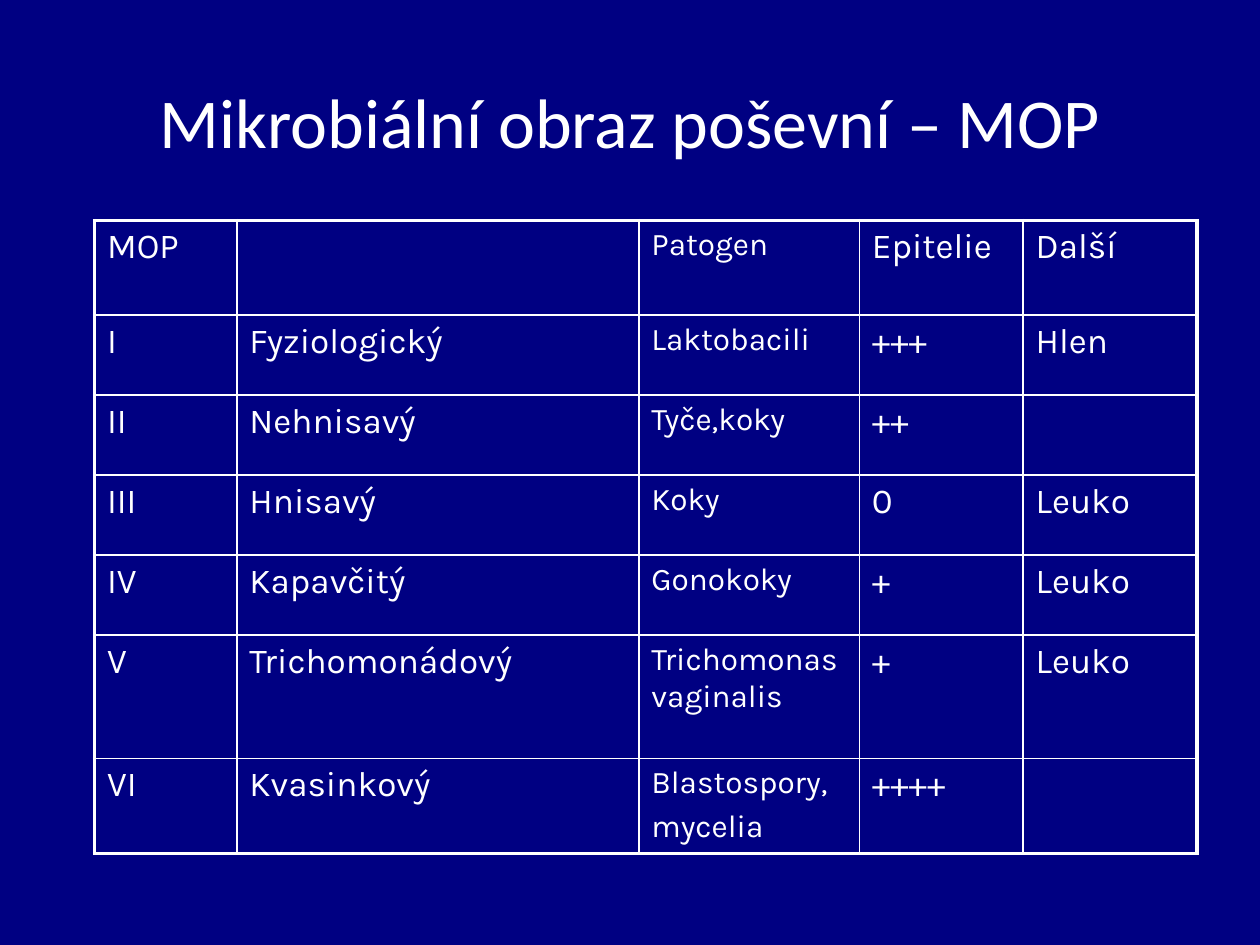
from lxml import etree
from pptx import Presentation
from pptx.dml.color import RGBColor
from pptx.enum.text import MSO_ANCHOR, PP_ALIGN
from pptx.oxml.ns import qn
from pptx.util import Inches, Pt

CENTER = PP_ALIGN.CENTER
MIDDLE = MSO_ANCHOR.MIDDLE
BLANK_LAYOUT = 6

COLORS = {"background": "000082", "text": "FFFFFF", "border": "FFFFFF"}
INNER_BORDER, OUTER_BORDER = 1, 2.25

COLUMN_WIDTHS = [1.13, 3.19, 1.75, 1.3, 1.38]
COLUMN_SIZES = [20, 20, 18, 20, 20]
ROW_HEIGHTS = [0.75] + [0.635] * 4 + [0.98, 0.74]
MOP_ROWS = [
    ["MOP", "", "Patogen", "Epitelie", "Další"],
    ["I", "Fyziologický", "Laktobacili", "+++", "Hlen"],
    ["II", "Nehnisavý", "Tyče,koky", "++", ""],
    ["III", "Hnisavý", "Koky", "0", "Leuko"],
    ["IV", "Kapavčitý", "Gonokoky", "+", "Leuko"],
    ["V", "Trichomonádový", "Trichomonas vaginalis", "+", "Leuko"],
    ["VI", "Kvasinkový", "Blastospory,\nmycelia", "++++", ""],
]


class SlideBuilder:
    title_font = "Calibri"
    table_font = "Karla"

    def __init__(self, slide):
        self.slide = slide

    def background(self):
        fill = self.slide.background.fill
        fill.solid()
        fill.fore_color.rgb = RGBColor.from_string(COLORS["background"])

    def style(self, paragraph, font_name, size):
        font = paragraph.font
        font.name = font_name
        font.size = Pt(size)
        font.color.rgb = RGBColor.from_string(COLORS["text"])

    def title(self, text, left, top, width, height):
        box = self.slide.shapes.add_textbox(
            Inches(left), Inches(top), Inches(width), Inches(height))
        frame = box.text_frame
        frame.word_wrap = True
        frame.vertical_anchor = MIDDLE
        frame.text = text
        paragraph = frame.paragraphs[0]
        paragraph.alignment = CENTER
        self.style(paragraph, self.title_font, 40)

    def cell_borders(self, cell, outer_sides):
        """Draw all four borders, thicker on the sides named in outer_sides."""
        properties = cell._tc.get_or_add_tcPr()
        for position, side in enumerate("LRTB"):
            width = OUTER_BORDER if side in outer_sides else INNER_BORDER
            line = etree.Element(qn(f"a:ln{side}"), w=str(Pt(width)))
            fill = etree.SubElement(line, qn("a:solidFill"))
            etree.SubElement(fill, qn("a:srgbClr"), val=COLORS["border"])
            properties.insert(position, line)

    def table(self, rows, left, top):
        last_row, last_column = len(rows) - 1, len(COLUMN_WIDTHS) - 1
        table = self.slide.shapes.add_table(
            len(rows), len(COLUMN_WIDTHS), Inches(left), Inches(top),
            Inches(sum(COLUMN_WIDTHS)), Inches(sum(ROW_HEIGHTS))).table
        table.first_row = table.horz_banding = False
        for column, width in zip(table.columns, COLUMN_WIDTHS):
            column.width = Inches(width)
        for row, height in zip(table.rows, ROW_HEIGHTS):
            row.height = Inches(height)

        for r, texts in enumerate(rows):
            for c, text in enumerate(texts):
                cell = table.cell(r, c)
                cell.fill.background()
                edges = {"L": c == 0, "R": c == last_column,
                         "T": r == 0, "B": r == last_row}
                self.cell_borders(cell, [side for side in edges if edges[side]])
                if not text:
                    continue
                cell.text = text
                for paragraph in cell.text_frame.paragraphs:
                    paragraph.space_before = Pt(4)
                    self.style(paragraph, self.table_font, COLUMN_SIZES[c])


def main():
    presentation = Presentation()
    presentation.slide_width = Inches(10)
    presentation.slide_height = Inches(7.5)
    layout = presentation.slide_layouts[BLANK_LAYOUT]
    builder = SlideBuilder(presentation.slides.add_slide(layout))
    builder.background()
    builder.title("Mikrobiální obraz poševní – MOP", 0.75, 0.33, 8.5, 1.25)
    builder.table(MOP_ROWS, 0.75, 1.75)
    presentation.save("out.pptx")


if __name__ == "__main__":
    main()
